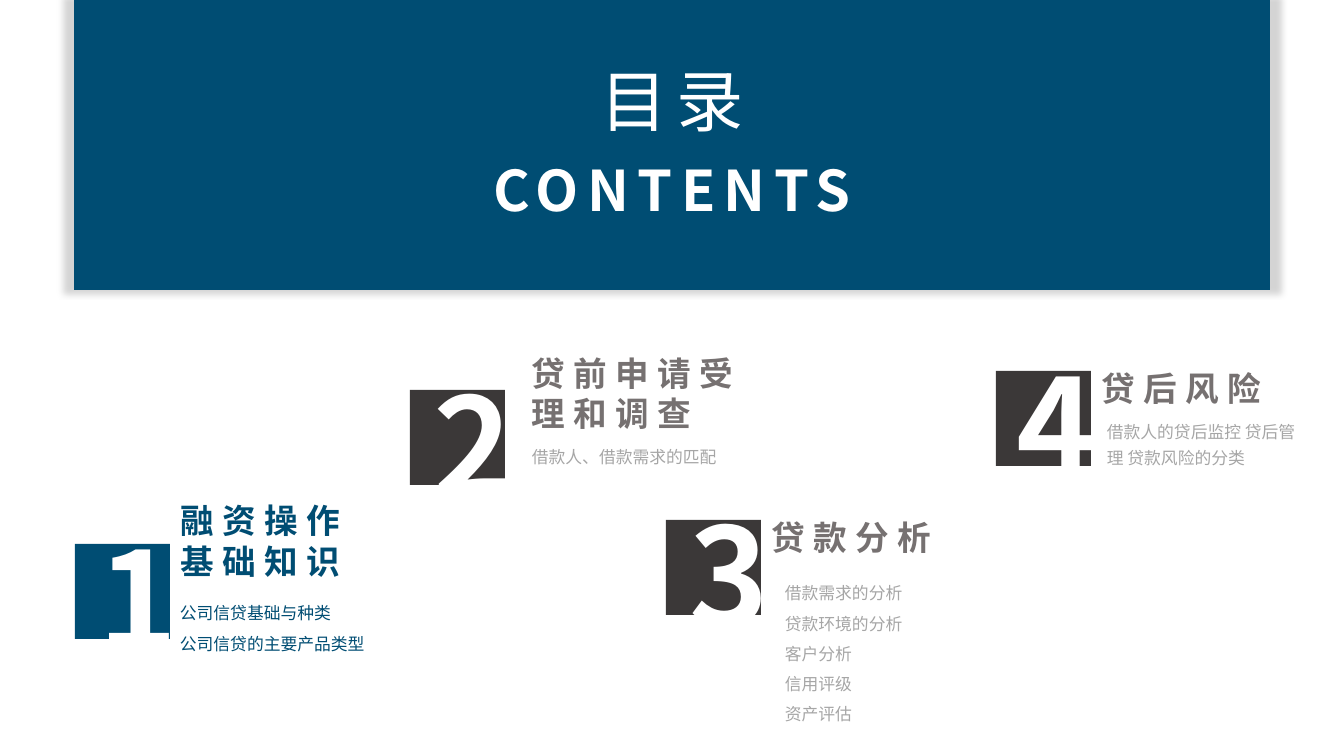
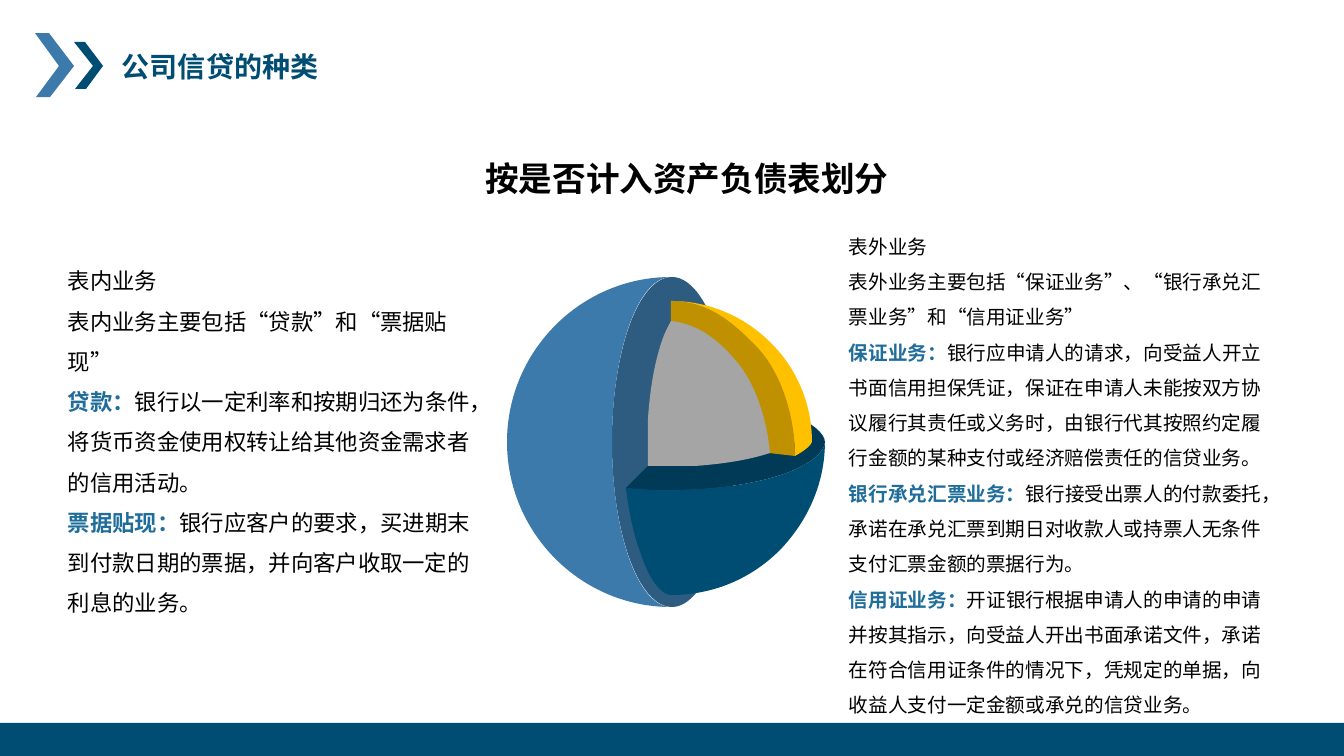
"""Builds a contents slide and a slide on the kinds of corporate credit."""
from lxml import etree
from pptx import Presentation
from pptx import util as u
from pptx.dml.color import RGBColor
from pptx.enum import shapes, text
from pptx.oxml import ns

PX = 914400 / 100.8
WIDTH, HEIGHT = 1344, 756
FONT = "Noto Sans CJK SC"
COLORS = {
    "navy": "004D73", "blue": "3C7AAB", "steel": "2D5C80", "deep": "003A56",
    "accent": "1F6D9B", "gold": "FFC000", "bronze": "BF9000", "core": "A5A5A5",
    "dark": "3B3838", "gray": "767171", "pale": "A6A6A6",
    "white": "FFFFFF", "black": "000000",
}

BANNER = (74, -1, 1196, 291)
BANNER_LINES = [
    ("CONTENTS", (74, 131, 1196, 97), {"size": 40, "bold": True}),
    ("目录", (74, 48, 1196, 97), {"size": 48, "font": "Lato"}),
]
TILE = 95
CHAPTERS = [
    {"tile": (75, 544), "shift": 14, "colors": ("navy", "navy", "navy"),
     "title": "融资操作基础知识", "title_at": (171, 491, 214, 95),
     "topics": ["公司信贷基础与种类", "公司信贷的主要产品类型"],
     "topics_at": (170, 588, 214, 68), "spacing": 1.5},
    {"tile": (410, 390), "shift": 14, "colors": ("dark", "gray", "pale"),
     "title": "贷前申请受理和调查", "title_at": (522, 347, 255, 91),
     "topics": ["借款人、借款需求的匹配"],
     "topics_at": (522, 436, 214, 36), "spacing": 1.3},
    {"tile": (666, 520), "shift": 14, "colors": ("dark", "gray", "pale"),
     "title": "贷款分析", "title_at": (762, 520, 214, 42),
     "topics": ["借款需求的分析", "贷款环境的分析", "客户分析", "信用评级", "资产评估"],
     "topics_at": (775, 568, 240, 159), "spacing": 1.5},
    {"tile": (996, 371), "shift": 11, "colors": ("dark", "gray", "pale"),
     "title": "贷后风险", "title_at": (1092, 371, 214, 42),
     "topics": ["借款人的贷后监控 贷后管理 贷款风险的分类"],
     "topics_at": (1097, 411, 214, 62), "spacing": 1.3},
]

PAGE_TITLE = "公司信贷的种类"
HEADING = "按是否计入资产负债表划分"
ON_SHEET = [
    "表内业务",
    "表内业务主要包括“贷款”和“票据贴现”",
    ("贷款：", "银行以一定利率和按期归还为条件，将货币资金使用权转让给其他资金需求者的信用活动。"),
    ("票据贴现：", "银行应客户的要求，买进期末到付款日期的票据，并向客户收取一定的利息的业务。"),
]
OFF_SHEET = [
    "表外业务",
    "表外业务主要包括“保证业务”、“银行承兑汇票业务”和“信用证业务”",
    ("保证业务：", "银行应申请人的请求，向受益人开立书面信用担保凭证，保证在申请人未能按双方协议"
     "履行其责任或义务时，由银行代其按照约定履行金额的某种支付或经济赔偿责任的信贷业务。"),
    ("银行承兑汇票业务：", "银行接受出票人的付款委托，承诺在承兑汇票到期日对收款人或持票人"
     "无条件支付汇票金额的票据行为。"),
    ("信用证业务：", "开证银行根据申请人的申请的申请并按其指示，向受益人开出书面承诺文件，"
     "承诺在符合信用证条件的情况下，凭规定的单据，向收益人支付一定金额或承兑的信贷业务。"),
]
CHEVRONS = [
    ("blue", [(35, 33), (49, 33), (74, 66), (50, 97), (36, 97), (59, 66)]),
    ("navy", [(74, 42), (85, 42), (103, 66), (86, 89), (75, 89), (93, 66)]),
]
GLOBE_CUT = (612, 277, 120, 330)
GLOBE_PARTS = [
    ("blue", [(612, 442), (612, 351, 638, 277, 671, 277), (581, 277, 507, 351, 507, 442),
              (507, 533, 581, 607, 671, 607), (638, 607, 612, 533, 612, 442)]),
    ("deep", [(784, 411), (765, 404, 742, 399, 718, 396), (626, 488),
              (641, 490, 656, 490, 671, 490), (715, 490, 754, 484, 784, 474),
              (813, 463, 825, 451, 825, 442), (825, 434, 813, 422, 784, 411)]),
    ("navy", [(825, 442), (825, 451, 813, 463, 784, 474), (754, 484, 715, 490, 671, 490),
              (656, 490, 641, 490, 626, 488), (629, 513, 634, 536, 641, 554),
              (651, 585, 664, 595, 671, 595), (713, 595, 751, 579, 780, 550),
              (808, 521, 825, 483, 825, 442)]),
    ("gold", [(755, 348), (778, 377, 795, 418, 795, 456), (806, 450, 811, 445, 812, 442),
              (812, 404, 797, 369, 771, 343), (745, 317, 710, 301, 671, 301),
              (710, 301, 748, 338, 755, 348)]),
    ("bronze", [(671, 301), (671, 442), (795, 456), (795, 418, 782, 372, 755, 345),
                (734, 324, 710, 301, 671, 301)]),
    ("core", [(770, 453), (767, 419, 755, 383, 737, 362), (717, 338, 697, 324, 671, 321),
              (669, 325, 666, 330, 663, 338), (655, 360, 650, 388, 648, 419),
              (648, 466), (695, 466), (723, 464, 749, 460, 770, 453)]),
]


def emu(*lengths):
    return [round(length * PX) for length in lengths]


def color(name):
    return RGBColor.from_string(COLORS[name])


def paint(shape, fill):
    shape.shadow.inherit = False
    shape.fill.solid()
    shape.fill.fore_color.rgb = color(fill)
    shape.line.fill.background()
    return shape


def add_block(page, place, fill, kind=shapes.MSO_SHAPE.RECTANGLE):
    return paint(page.shapes.add_shape(kind, *emu(*place)), fill)


def add_halo(shape):
    effects = shape._element.spPr.find(ns.qn("a:effectLst"))
    shadow = etree.SubElement(effects, ns.qn("a:outerShdw"), blurRad="63500", sx="102000",
                              sy="102000", algn="ctr", rotWithShape="0")
    tint = etree.SubElement(shadow, ns.qn("a:srgbClr"), val=COLORS["black"])
    etree.SubElement(tint, ns.qn("a:alpha"), val="16000")


def add_outline(page, fill, steps):
    """Draws straight steps (x, y) and cubic steps (two controls and an end)."""
    points = [emu(*step[at:at + 2]) for step in steps for at in range(0, len(step), 2)]
    builder = page.shapes.build_freeform(*points[0], scale=1.0)
    builder.add_line_segments(points[1:], close=True)
    shape = paint(builder.convert_to_shape(), fill)
    segments = iter(list(shape._element.iter(ns.qn("a:lnTo"))))
    for step in steps[1:]:
        segment = next(segments)
        if len(step) == 6:
            curve = etree.Element(ns.qn("a:cubicBezTo"))
            segment.addprevious(curve)
            for part in (segment, next(segments), next(segments)):
                curve.append(part[0])
                part.getparent().remove(part)
    return shape


def add_text(page, lines, place, size, ink, bold=False, font=FONT, spacing=None, tracking=0,
             align=None, anchor=text.MSO_ANCHOR.TOP, wrap=True, grow=False, indent=0):
    box = page.shapes.add_textbox(*emu(*place))
    frame = box.text_frame
    frame.word_wrap = wrap
    frame.vertical_anchor = anchor
    if grow:
        frame.auto_size = text.MSO_AUTO_SIZE.SHAPE_TO_FIT_TEXT
    for index, line in enumerate(lines):
        para = frame.add_paragraph() if index else frame.paragraphs[0]
        para.alignment = align
        para.line_spacing = spacing
        para.font.size = u.Pt(size)
        para.font.bold = bold
        para.font.color.rgb = color(ink)
        para.font.name = font
        props = para._p.get_or_add_pPr()
        defaults = props.find(ns.qn("a:defRPr"))
        etree.SubElement(defaults, ns.qn("a:ea"), typeface=font)
        if tracking:
            defaults.set("spc", str(tracking * 100))
        if indent:
            props.set("marL", "0")
            props.set("indent", str(emu(indent)[0]))
        spans = (line,) if isinstance(line, str) else line
        for words in spans:
            span = para.add_run()
            span.text = words
        if len(spans) > 1:
            lead = para.runs[0].font
            lead.bold = True
            lead.color.rgb = color("accent")


def build_contents(page):
    add_halo(add_block(page, BANNER, "navy"))
    bottom = text.MSO_ANCHOR.BOTTOM
    for words, place, style in BANNER_LINES:
        add_text(page, [words], place, ink="white", tracking=6,
                 align=text.PP_ALIGN.CENTER, anchor=bottom, **style)
    for number, chapter in enumerate(CHAPTERS, 1):
        left, top = chapter["tile"]
        tile_color, title_color, topic_color = chapter["colors"]
        add_block(page, (left, top, TILE, TILE), tile_color)
        add_text(page, [str(number)], (left + chapter["shift"], top - 34, 96, 173),
                 96, "white", bold=True)
        add_text(page, [chapter["title"]], chapter["title_at"], 24, title_color,
                 bold=True, tracking=6, anchor=bottom)
        add_text(page, chapter["topics"], chapter["topics_at"], 12, topic_color,
                 spacing=chapter["spacing"], grow=True)


def build_credit_kinds(page):
    for fill, steps in CHEVRONS:
        add_outline(page, fill, steps)
    add_block(page, (0, 723, WIDTH, HEIGHT - 723), "navy")
    add_text(page, [PAGE_TITLE], (112, 45, 498, 44), 20, "navy", bold=True, grow=True)
    add_block(page, GLOBE_CUT, "steel", shapes.MSO_SHAPE.OVAL)
    for fill, steps in GLOBE_PARTS:
        add_outline(page, fill, steps)
    add_text(page, [HEADING], (444, 153, 457, 50), 24, "black", bold=True,
             align=text.PP_ALIGN.CENTER, wrap=False, grow=True, indent=29)
    add_text(page, ON_SHEET, (58, 249, 431, 331), 16, "black", spacing=1.5, grow=True)
    add_text(page, OFF_SHEET, (839, 218, 440, 505), 14, "black", spacing=1.5, grow=True)


def main():
    deck = Presentation()
    deck.slide_width, deck.slide_height = emu(WIDTH, HEIGHT)
    for build in (build_contents, build_credit_kinds):
        build(deck.slides.add_slide(deck.slide_layouts[6]))
    deck.save("out.pptx")


if __name__ == "__main__":
    main()
